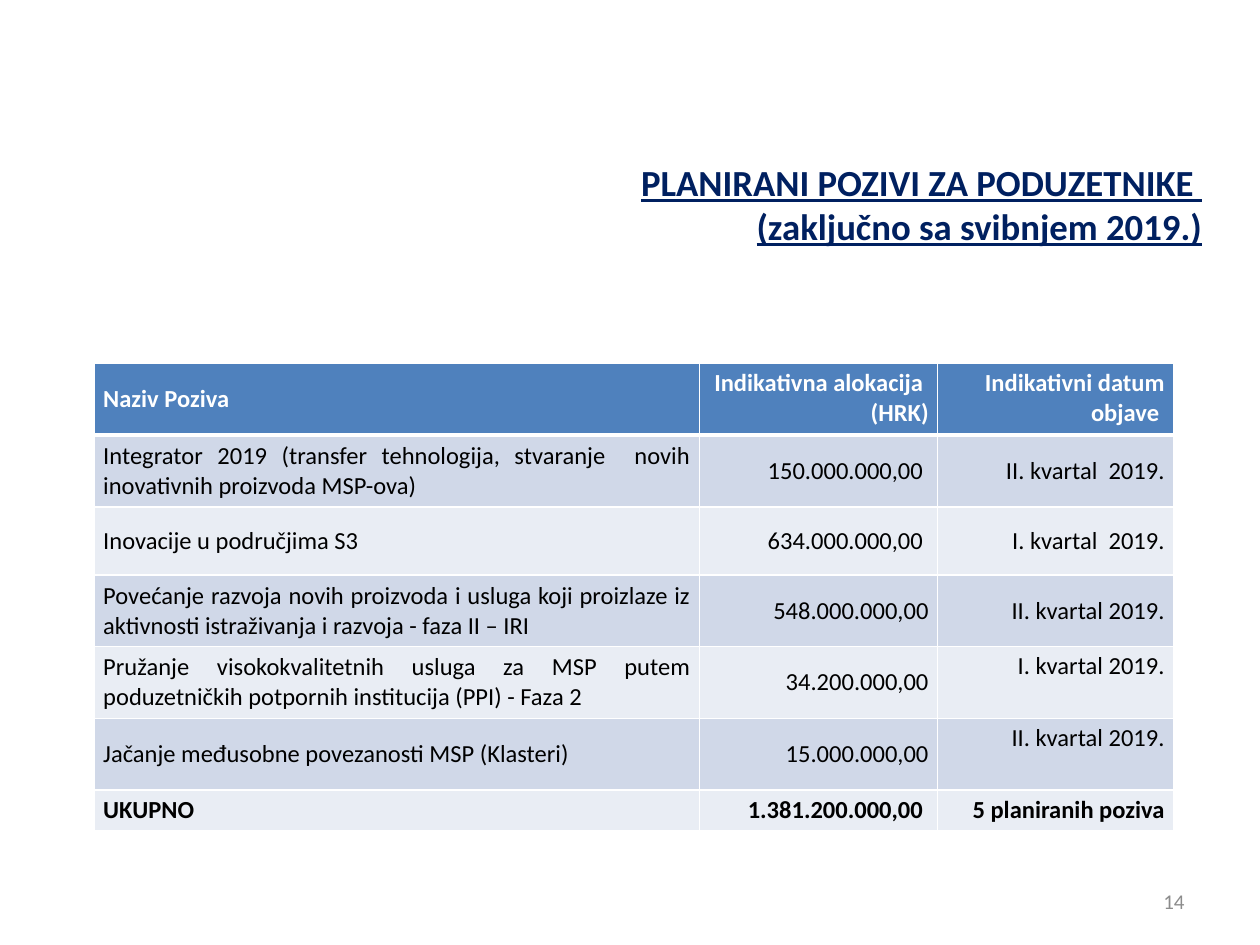
import pptx
import pptx.dml.color
import pptx.enum.text
import pptx.oxml
import pptx.oxml.ns
import pptx.util

Pt = pptx.util.Pt
RGBColor = pptx.dml.color.RGBColor
ALIGN = pptx.enum.text.PP_ALIGN
ANCHOR = pptx.enum.text.MSO_ANCHOR

NAVY = RGBColor(0x00, 0x20, 0x60)
BLUE = RGBColor(0x4F, 0x81, 0xBD)
BAND_DARK = RGBColor(0xD0, 0xD8, 0xE8)
BAND_LIGHT = RGBColor(0xE9, 0xED, 0xF4)
WHITE = RGBColor(0xFF, 0xFF, 0xFF)
BLACK = RGBColor(0x00, 0x00, 0x00)
GRAY = RGBColor(0x8C, 0x8C, 0x8C)

COLUMN_WIDTHS = [345.6, 136.1, 134.9]
ROW_HEIGHTS = [41, 41, 38.9, 41, 41, 41, 23]
CALLS = [
    ("Naziv Poziva", "Indikativna alokacija \n(HRK)", "Indikativni datum objave "),
    ("Integrator 2019 (transfer tehnologija, stvaranje  novih inovativnih proizvoda MSP-ova) ",
     "150.000.000,00 ", "II. kvartal  2019."),
    ("Inovacije u područjima S3", "634.000.000,00 ", "I. kvartal  2019."),
    ("Povećanje razvoja novih proizvoda i usluga koji proizlaze iz aktivnosti "
     "istraživanja i razvoja - faza II – IRI", "548.000.000,00", "II. kvartal 2019."),
    ("Pružanje visokokvalitetnih usluga za MSP putem poduzetničkih potpornih "
     "institucija (PPI) - Faza 2", "34.200.000,00", "I. kvartal 2019."),
    ("Jačanje međusobne povezanosti MSP (Klasteri)", "15.000.000,00", "II. kvartal 2019."),
    ("UKUPNO", "1.381.200.000,00 ", "5 planiranih poziva"),
]
TOTAL_ROW = len(CALLS) - 1
JUSTIFIED_ROWS = {1, 3, 4, 5}
TOP_DATE_ROWS = {4, 5}


def set_attributes(target, values):
    for name, value in values.items():
        setattr(target, name, value)


def write_text(text_frame, text, alignment, color, values):
    text_frame.text = text
    for paragraph in text_frame.paragraphs:
        paragraph.alignment = alignment
        set_attributes(paragraph.font, {"name": "Calibri", **values})
        paragraph.font.color.rgb = color


def add_text(slide, box, text, color, values):
    """Add right-aligned, vertically centred text in a box of points."""
    text_frame = slide.shapes.add_textbox(*map(Pt, box)).text_frame
    set_attributes(text_frame, {"word_wrap": True, "vertical_anchor": ANCHOR.MIDDLE})
    write_text(text_frame, text, ALIGN.RIGHT, color, values)


def set_borders(cell, widths):
    """Draw white borders; widths maps a side (L, R, T, B) to points."""
    namespace = pptx.oxml.ns.nsdecls("a")
    for index, (side, width) in enumerate(widths.items()):
        line = pptx.oxml.parse_xml(
            f'<a:ln{side} {namespace} w="{Pt(width)}"><a:solidFill>'
            f'<a:srgbClr val="{WHITE}"/></a:solidFill></a:ln{side}>')
        cell._tc.get_or_add_tcPr().insert(index, line)


def format_cell(cell, row, column, text):
    header = row == 0
    top = (header and column > 0) or (row in TOP_DATE_ROWS and column == 2)
    set_attributes(cell, {
        "margin_left": Pt(5), "margin_right": Pt(5),
        "margin_top": Pt(2.9), "margin_bottom": Pt(2.9),
        "vertical_anchor": ANCHOR.TOP if top else ANCHOR.MIDDLE})
    if column > 0:
        alignment = ALIGN.RIGHT
    else:
        alignment = ALIGN.JUSTIFY if row in JUSTIFIED_ROWS else ALIGN.LEFT
    write_text(cell.text_frame, text, alignment, WHITE if header else BLACK,
               {"size": Pt(14), "bold": row in (0, TOTAL_ROW)})
    cell.fill.solid()
    cell.fill.fore_color.rgb = BLUE if header else BAND_DARK if row % 2 else BAND_LIGHT
    set_borders(cell, {"L": 1, "R": 1, "T": 3 if row == 1 else 1, "B": 3 if header else 1})


def add_calls_table(slide, left, top):
    table = slide.shapes.add_table(
        len(CALLS), len(COLUMN_WIDTHS), Pt(left), Pt(top),
        Pt(sum(COLUMN_WIDTHS)), Pt(sum(ROW_HEIGHTS))).table
    for column, width in zip(table.columns, COLUMN_WIDTHS):
        column.width = Pt(width)
    for row, height in zip(table.rows, ROW_HEIGHTS):
        row.height = Pt(height)
    for row, texts in enumerate(CALLS):
        for column, text in enumerate(texts):
            format_cell(table.cell(row, column), row, column, text)


def main():
    presentation = pptx.Presentation()
    set_attributes(presentation, {"slide_width": Pt(720), "slide_height": Pt(540)})
    slide = presentation.slides.add_slide(presentation.slide_layouts[6])
    add_text(slide, (252, 82.8, 442.1, 67.7),
             "PLANIRANI POZIVI ZA PODUZETNIKE \v(zaključno sa svibnjem 2019.)",
             NAVY, {"size": Pt(21), "bold": True, "underline": True})
    add_calls_table(slide, 54, 207.6)
    add_text(slide, (516.2, 500.4, 167.8, 28.8), "14", GRAY, {"size": Pt(12)})
    presentation.save("out.pptx")


if __name__ == "__main__":
    main()
